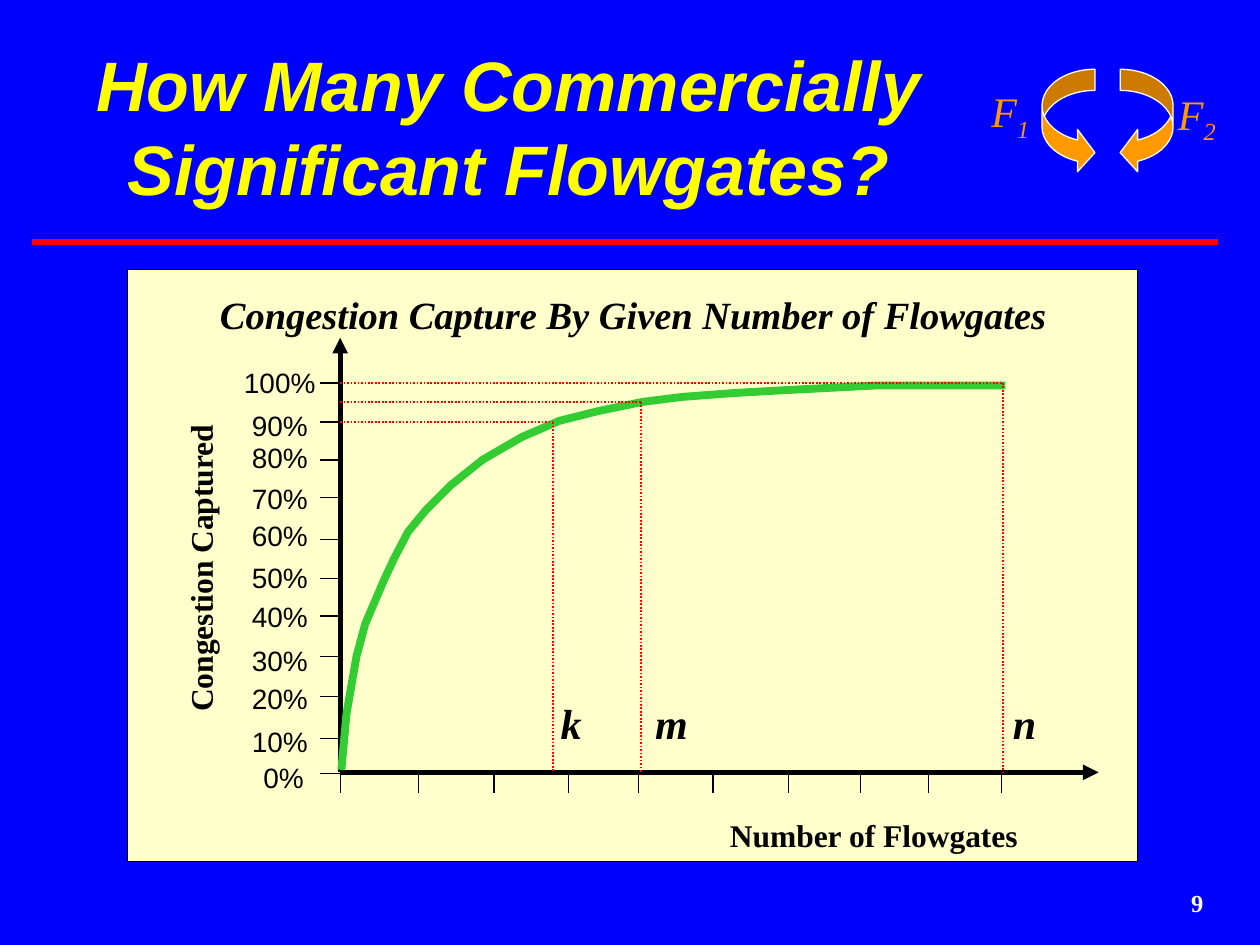
from dataclasses import dataclass

from lxml import etree
from pptx import Presentation
from pptx.dml.color import RGBColor
from pptx.enum.dml import MSO_LINE
from pptx.enum.shapes import MSO_CONNECTOR, MSO_SHAPE
from pptx.enum.text import MSO_ANCHOR, MSO_AUTO_SIZE, PP_ALIGN
from pptx.oxml.ns import qn
from pptx.util import Inches, Pt

LEFT, MID, RIGHT = PP_ALIGN.LEFT, PP_ALIGN.CENTER, PP_ALIGN.RIGHT
DOTS = MSO_LINE.ROUND_DOT
GROW, FIXED = MSO_AUTO_SIZE.SHAPE_TO_FIT_TEXT, MSO_AUTO_SIZE.NONE
RECT = MSO_SHAPE.RECTANGLE
BEND_R, BEND_L = MSO_SHAPE.CURVED_RIGHT_ARROW, MSO_SHAPE.CURVED_LEFT_ARROW


@dataclass(frozen=True)
class Theme:
    sans: str = "Arial"
    serif: str = "Times New Roman"
    back: str = "0000FF"
    head: str = "FFFF00"
    red: str = "FF0000"
    gold: str = "FF9900"
    cream: str = "FFFFCC"
    green: str = "33CC33"
    black: str = "000000"
    white: str = "FFFFFF"
    title: int = 40
    mark: int = 24
    chart: int = 22
    axis: int = 18
    tick: int = 16
    page: int = 14


def color(code):
    return RGBColor.from_string(code)


class Painter:
    def __init__(self, slide, theme):
        self.slide, self.theme = slide, theme

    def font(self, para, size, tint, face, bold=False, slant=False):
        for run in para.runs:
            font = run.font
            font.size, font.name = Pt(size), face
            font.bold, font.italic = bold, slant
            font.color.rgb = color(tint)

    def title(self, text, box):
        shape = self.slide.shapes.title
        shape.left, shape.top, shape.width, shape.height = map(Inches, box)
        frame = shape.text_frame
        frame.text = text
        frame.word_wrap, frame.auto_size = True, FIXED
        frame.vertical_anchor = MSO_ANCHOR.MIDDLE
        para = frame.paragraphs[0]
        para.alignment = MID
        self.font(para, self.theme.title, self.theme.head, self.theme.sans, True, True)

    def text(self, text, box, size, tint, face, bold=False, slant=False,
             align=MID, wrap=True, turn=0, sub="", tabs=()):
        shape = self.slide.shapes.add_textbox(*map(Inches, box))
        shape.rotation = turn
        frame = shape.text_frame
        frame.text = text
        frame.word_wrap, frame.auto_size = wrap, GROW
        para = frame.paragraphs[0]
        para.alignment = align
        if sub:
            run = para.add_run()
            run.text = sub
            run._r.get_or_add_rPr().set("baseline", "-25000")
        if tabs:
            stops = etree.SubElement(para._p.get_or_add_pPr(), qn("a:tabLst"))
            for pos in tabs:
                etree.SubElement(stops, qn("a:tab"), pos=str(Inches(pos)), algn="l")
        self.font(para, size, tint, face, bold, slant)

    def line(self, x1, y1, x2, y2, tint, width=0.75, dash=None, arrow=False):
        link = self.slide.shapes.add_connector(
            MSO_CONNECTOR.STRAIGHT, *map(Inches, (x1, y1, x2, y2)))
        link.line.color.rgb, link.line.width = color(tint), Pt(width)
        if dash:
            link.line.dash_style = dash
        if arrow:
            etree.SubElement(link.line._get_or_add_ln(), qn("a:headEnd"), type="triangle")
        etree.SubElement(link._element.spPr, qn("a:effectLst"))

    def shape(self, kind, box, fill, tint, adjust=()):
        shape = self.slide.shapes.add_shape(kind, *map(Inches, box))
        shape.shadow.inherit = False
        for i, value in enumerate(adjust):
            shape.adjustments[i] = value
        shape.fill.solid()
        shape.fill.fore_color.rgb = color(fill)
        shape.line.color.rgb, shape.line.width = color(tint), Pt(0.75)

    def curve(self, points, tint, width):
        spots = [(Inches(x), Inches(y)) for x, y in points]
        build = self.slide.shapes.build_freeform(*spots[0])
        build.add_line_segments(spots[1:], close=False)
        shape = build.convert_to_shape()
        shape.shadow.inherit = False
        shape.fill.background()
        shape.line.color.rgb, shape.line.width = color(tint), Pt(width)


def emblem(pen):
    """Two facing curved arrows with their labels."""
    look = pen.theme
    for kind, x in ((BEND_R, 8.27), (BEND_L, 8.89)):
        pen.shape(kind, (x, 0.55, 0.42, 0.83), look.gold, look.white, (0.4, 0.8, 0.33))
    for sub, x, y in (("1", 7.77, 0.63), ("2", 9.25, 0.65)):
        pen.text("F", (x, y, 0.75, 0.56), look.mark, look.gold, look.serif,
                 slant=True, align=LEFT, sub=sub)


def graph(pen):
    look = pen.theme
    left, base = 2.7, 6.13
    pen.shape(RECT, (1.01, 2.14, 8.02, 4.7), look.cream, look.black)

    # Axes
    pen.line(left, 2.68, left, base, look.black, 3, arrow=True)
    pen.line(8.72, base, left, base, look.black, 3, arrow=True)

    # Capture curve
    pen.curve([(2.71, 6.11), (2.75, 5.67), (2.83, 5.21), (2.9, 4.95), (3.05, 4.6),
               (3.13, 4.43), (3.24, 4.22), (3.38, 4.05), (3.58, 3.85), (3.83, 3.65),
               (4.14, 3.47), (4.44, 3.34), (4.76, 3.26), (5.1, 3.19), (5.42, 3.15),
               (5.82, 3.12), (6.17, 3.1), (6.56, 3.08), (6.94, 3.06), (7.98, 3.06)],
              look.green, 4.5)

    # Ticks and percent labels, from 0% up
    ticks = (6.14, 5.86, 5.53, 5.21, 4.89, 4.59, 4.28, 3.95, 3.65, 3.35, 3.04)
    tops = (5.99, 5.7, 5.36, 5.06, 4.71, 4.4, 4.07, 3.77, 3.45, 3.19, 2.85)
    for i, (y, top) in enumerate(zip(ticks, tops)):
        pen.line(left, y, left - 0.16, y, look.black)
        pen.text(f"{i * 10}%", (1.75 if i else 1.78, top, 0.94, 0.37),
                 look.tick, look.black, look.sans)
    for x in (left, 3.32, 3.92, 4.51, 5.07, 5.66, 6.26, 6.83, 7.37, 7.95):
        pen.line(x, base + 0.16, x, base, look.black)

    # Guides for k, m and n
    for x, y in ((4.39, 3.35), (5.09, 3.19), (7.96, 3.04)):
        pen.line(left, y, x, y, look.red, 1, DOTS)
        pen.line(x, y, x, base, look.red, 1, DOTS)

    # Captions
    for text, box, turn in (("Number of Flowgates", (5.69, 6.43, 2.49, 0.4), 0),
                            ("Congestion Captured", (0.35, 4.31, 2.48, 0.4), 270)):
        pen.text(text, box, look.axis, look.black, look.serif, True, wrap=False, turn=turn)
    pen.text("k\tm\tn", (4.35, 5.49, 4.51, 0.5), look.mark, look.black, look.serif,
             True, True, LEFT, tabs=(0.75, 3.59))
    pen.text("Congestion Capture By Given Number of Flowgates",
             (1.61, 2.26, 6.83, 0.47), look.chart, look.black, look.serif, True, True)


def main():
    deck = Presentation()
    deck.slide_width, deck.slide_height = Inches(10), Inches(7.5)
    slide = deck.slides.add_slide(deck.slide_layouts[5])
    look = Theme()
    slide.background.fill.solid()
    slide.background.fill.fore_color.rgb = color(look.back)
    pen = Painter(slide, look)

    # Header
    pen.line(0.25, 1.92, 9.67, 1.92, look.red, 3)
    emblem(pen)
    pen.title("How Many Commercially Significant Flowgates?", (0.41, 0.22, 7.25, 1.55))

    # Body and page number
    graph(pen)
    pen.text("9", (7.57, 7, 2.08, 0.5), look.page, look.white, look.serif, True, align=RIGHT)
    deck.save("out.pptx")


if __name__ == "__main__":
    main()
